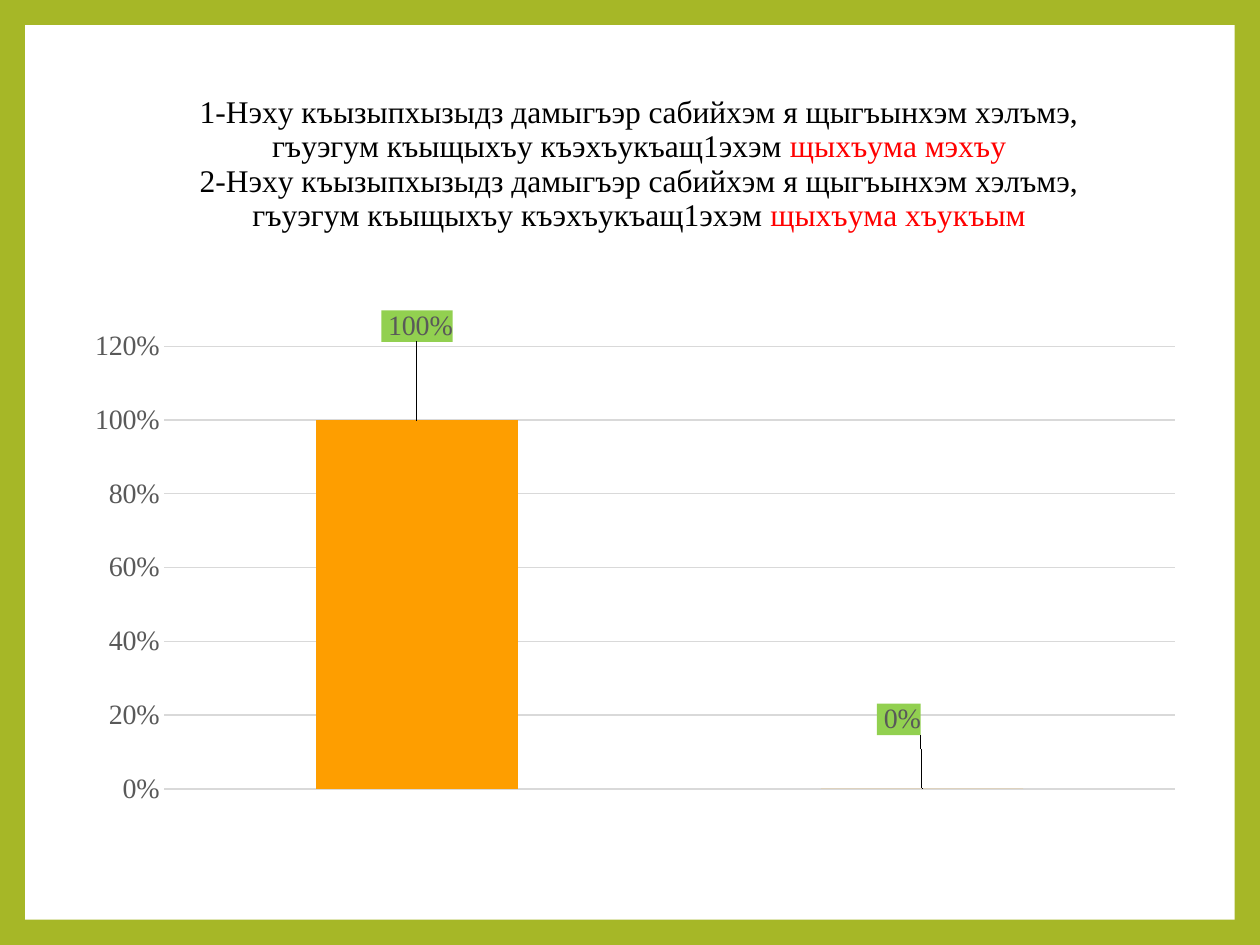
import pptx
import pptx.chart.data
import pptx.dml.color
import pptx.enum.chart
import pptx.enum.shapes
import pptx.enum.text
import pptx.oxml
import pptx.oxml.ns
import pptx.util
from pptx.util import Inches

COLORS = {
    "frame": "A6B727", "panel": "FFFFFF", "bar": "FE9E00", "label": "92D050",
    "grid": "D9D9D9", "muted": "595959", "title": "000000", "accent": "FF0000",
}
SERIF = "Times New Roman"
QN = pptx.oxml.ns.qn
NS = pptx.oxml.ns.nsdecls("c", "a")


def style_font(font, size, color, name=SERIF):
    values = {"size": pptx.util.Pt(size), "name": name, "bold": False}
    for attribute, value in values.items():
        setattr(font, attribute, value)
    font.color.rgb = pptx.dml.color.RGBColor.from_string(COLORS[color])


def place(parent, index, **values):
    """Give a chart part a manual layout as its child number index."""
    for old in parent.findall(QN("c:layout")):
        parent.remove(old)
    fields = "".join(f'<c:{key} val="{value}"/>' for key, value in values.items())
    parent.insert(index, pptx.oxml.parse_xml(
        f"<c:layout {NS}><c:manualLayout>{fields}</c:manualLayout></c:layout>"))


deck = pptx.Presentation()
deck.slide_width, deck.slide_height = Inches(10), Inches(7.5)
slide = deck.slides.add_slide(deck.slide_layouts[6])

# Green frame around a white panel
backdrop = slide.background.fill
backdrop.solid()
backdrop.fore_color.rgb = pptx.dml.color.RGBColor.from_string(COLORS["frame"])
panel = slide.shapes.add_shape(
    pptx.enum.shapes.MSO_SHAPE.RECTANGLE,
    Inches(0.2), Inches(0.2), Inches(9.6), Inches(7.1))
panel.shadow.inherit = False
panel.fill.solid()
panel.fill.fore_color.rgb = pptx.dml.color.RGBColor.from_string(COLORS["panel"])
panel.line.fill.background()

# Column chart
answers = pptx.chart.data.CategoryChartData(number_format="0%")
answers.categories = ["1", "2"]
answers.add_series("Series 1", [1, 0])
chart = slide.shapes.add_chart(
    pptx.enum.chart.XL_CHART_TYPE.COLUMN_CLUSTERED,
    Inches(0.35), Inches(0.52), Inches(9.27), Inches(6.46), answers).chart
chart.has_legend = False
style_font(chart.font, 10, "title", "Cabin")
place(chart.element.find(".//" + QN("c:plotArea")), 0, layoutTarget="inner",
      xMode="edge", yMode="edge", x=0.103, y=0.345, w=0.865, h=0.544)

# Title: the same question with two endings
question = ("-Нэху къызыпхызыдз дамыгъэр сабийхэм я щыгъынхэм хэлъмэ, "
            "гъуэгум къыщыхъу къэхъукъащ1эхэм ")
heading = chart.chart_title.text_frame
for number, ending in enumerate(["щыхъума мэхъу", "щыхъума хъукъым"], 1):
    line = heading.paragraphs[0] if number == 1 else heading.add_paragraph()
    line.alignment = pptx.enum.text.PP_ALIGN.CENTER
    for text, color in [(f"{number}{question}", "title"), (ending, "accent")]:
        run = line.add_run()
        run.text = text
        style_font(run.font, 18, color)
place(chart.chart_title.element, 1, xMode="edge", yMode="edge", x=0.13, y=0.03)

# Axes
chart.category_axis.visible = False
share_axis = chart.value_axis
axis_format = {
    "minimum_scale": 0, "maximum_scale": 1.2, "major_unit": 0.2,
    "major_tick_mark": pptx.enum.chart.XL_TICK_MARK.NONE,
    "minor_tick_mark": pptx.enum.chart.XL_TICK_MARK.NONE,
    "has_major_gridlines": True,
}
for attribute, value in axis_format.items():
    setattr(share_axis, attribute, value)
share_axis.tick_labels.number_format = "0%"
share_axis.tick_labels.number_format_is_linked = False
style_font(share_axis.tick_labels.font, 16, "muted")
share_axis.format.line.fill.background()
grid = share_axis.major_gridlines.format.line
grid.width = pptx.util.Pt(0.75)
grid.color.rgb = pptx.dml.color.RGBColor.from_string(COLORS["grid"])

# Bars
plot = chart.plots[0]
plot.gap_width = 150
plot.vary_by_categories = False
shares = plot.series[0]
shares.format.fill.solid()
shares.format.fill.fore_color.rgb = pptx.dml.color.RGBColor.from_string(COLORS["bar"])

# Green labels, moved away from the bar ends
for index, text in enumerate([" 100%", " 0%"]):
    label = shares.points[index].data_label
    run = label.text_frame.paragraphs[0].add_run()
    run.text = text
    style_font(run.font, 16, "muted")
    label.position = pptx.enum.chart.XL_LABEL_POSITION.OUTSIDE_END
offsets = [(0, -0.09), (-0.02, -0.06)]
for label, (x, y) in zip(chart.element.iter(QN("c:dLbl")), offsets):
    place(label, 1, x=x, y=y)
    for old in label.findall(QN("c:spPr")):
        label.remove(old)
    label.find(QN("c:tx")).addnext(pptx.oxml.parse_xml(
        f'<c:spPr {NS}><a:solidFill><a:srgbClr val="{COLORS["label"]}"/>'
        "</a:solidFill></c:spPr>"))

deck.save("out.pptx")
